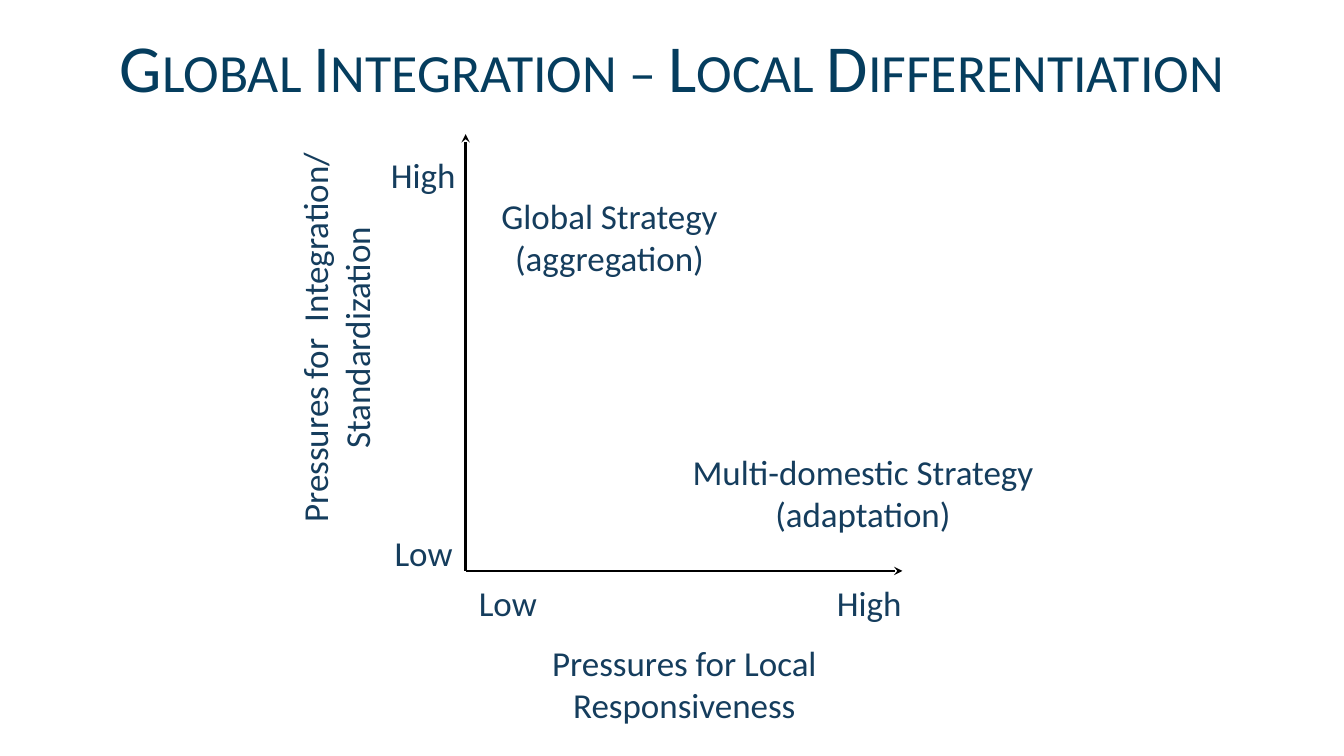
from lxml.etree import SubElement
from pptx import Presentation
from pptx.dml.color import RGBColor
from pptx.enum.shapes import MSO_CONNECTOR
from pptx.enum.text import MSO_ANCHOR, PP_ALIGN
from pptx.oxml.ns import qn
from pptx.util import Pt

COLORS = {"title": "053D5E", "label": "153D5D", "axis": "000000"}
SLIDE_WIDTH, SLIDE_HEIGHT = 960, 540
FRAME_FORMAT = {
    "margin_left": Pt(7.2),
    "margin_right": Pt(7.2),
    "margin_top": Pt(3.6),
    "margin_bottom": Pt(3.6),
    "vertical_anchor": MSO_ANCHOR.TOP,
}


def add_label(slide, lines, box, size=25, color="label", wrap=True, rotation=0):
    """Place centred lines of text in a box and return their runs."""
    label = slide.shapes.add_textbox(*map(Pt, box))
    label.rotation = rotation
    frame = label.text_frame
    for name, value in (FRAME_FORMAT | {"word_wrap": wrap}).items():
        setattr(frame, name, value)
    font_format = {"name": "Calibri", "size": Pt(size)}
    runs = []
    for index, line in enumerate(lines):
        paragraph = frame.add_paragraph() if index else frame.paragraphs[0]
        paragraph.alignment = PP_ALIGN.CENTER
        run = paragraph.add_run()
        run.text = line
        for name, value in font_format.items():
            setattr(run.font, name, value)
        run.font.color.rgb = RGBColor.from_string(COLORS[color])
        runs.append(run)
    return runs


def add_axis(slide, start, end):
    """Draw a line with a stealth arrowhead at its end."""
    axis = slide.shapes.add_connector(
        MSO_CONNECTOR.STRAIGHT, *map(Pt, (*start, *end))
    )
    axis.line.width = Pt(2)
    axis.line.color.rgb = RGBColor.from_string(COLORS["axis"])
    SubElement(axis.line._get_or_add_ln(), qn("a:tailEnd"), type="stealth")
    SubElement(axis._element.spPr, qn("a:effectLst"))


def add_title(slide, box):
    title = "Global Integration – Local Differentiation"
    for run in add_label(slide, [title], box, size=48, color="title"):
        run._r.get_or_add_rPr().set("cap", "small")


def add_strategy_map(slide, box):
    """Draw the two axes along the box, with scale labels, titles and strategies."""
    left, top, width, height = box
    right, bottom = left + width, top + height
    origin = (left, bottom)
    add_axis(slide, origin, (left, top))
    add_axis(slide, origin, (right, bottom))

    scale_height, title_height = 37.5, 67.7
    high_width, low_width = 60.5, 56.2
    scale_labels = [
        ("High", left - high_width, top + 10, high_width),
        ("High", right - 54, bottom + 4, high_width),
        ("Low", left - low_width - 2, bottom - 32, low_width),
        ("Low", left + 2, bottom + 4, low_width),
    ]
    for text, x, y, label_width in scale_labels:
        add_label(slide, [text], (x, y, label_width, scale_height), wrap=False)

    add_label(slide, ["Pressures for  Integration/ Standardization"],
              (left - 238.3, top + 111.6, 290.9, title_height), rotation=270)
    add_label(slide, ["Pressures for Local Responsiveness"],
              (left + 26.6, bottom + 46.8, 259.2, title_height))
    add_label(slide, ["Global Strategy", "(aggregation)"],
              (left - 2, top + 39.6, 209.5, title_height))
    add_label(slide, ["Multi-domestic Strategy", "(adaptation)"],
              (left + 152, bottom - 89.3, 263.5, 98))


def main():
    presentation = Presentation()
    presentation.slide_width = Pt(SLIDE_WIDTH)
    presentation.slide_height = Pt(SLIDE_HEIGHT)
    slide = presentation.slides.add_slide(presentation.slide_layouts[6])
    add_strategy_map(slide, (332.6, 95.8, 312, 312))
    add_title(slide, (0, 14.4, SLIDE_WIDTH, 65.5))
    presentation.save("out.pptx")


if __name__ == "__main__":
    main()
